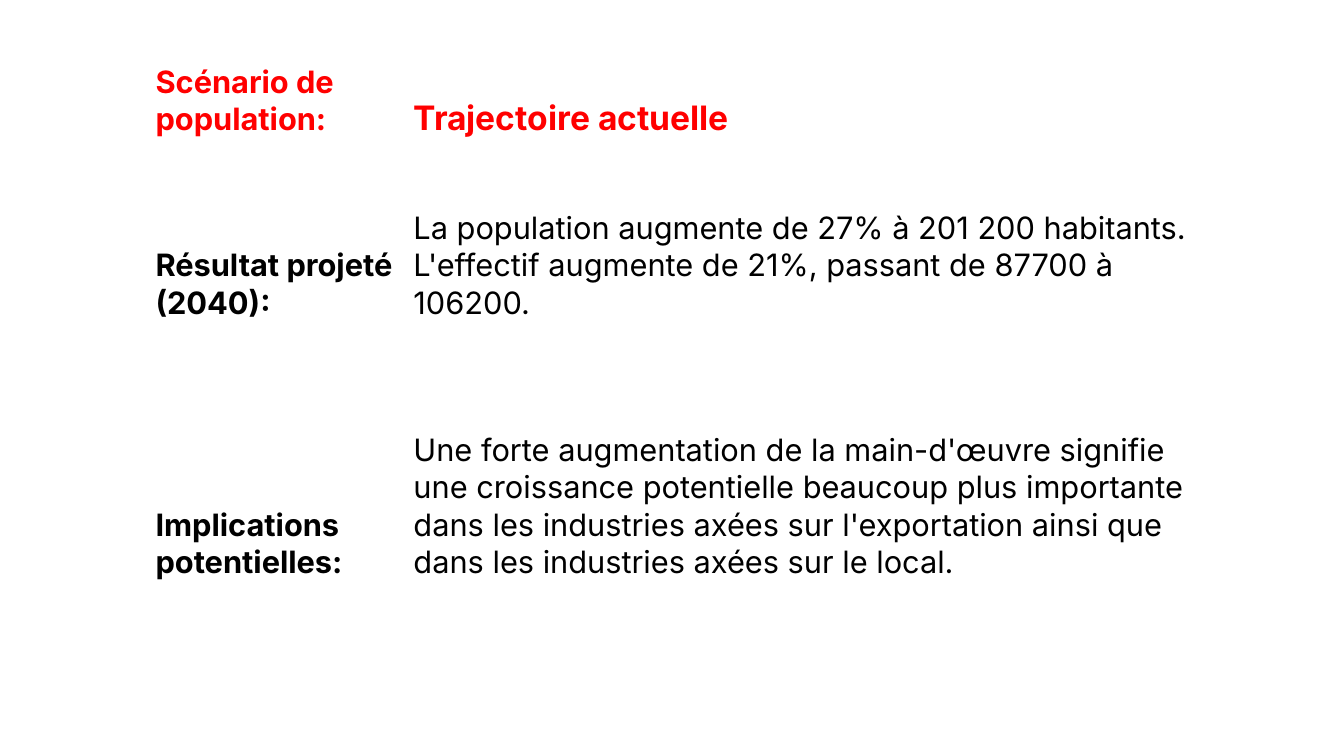
from lxml.etree import SubElement
from pptx import Presentation
from pptx.dml.color import RGBColor
from pptx.enum.text import MSO_ANCHOR
from pptx.oxml.ns import qn
from pptx.util import Cm, Pt

RED = RGBColor(0xFF, 0x00, 0x00)
BLACK = RGBColor(0x00, 0x00, 0x00)
WHITE = RGBColor(0xFF, 0xFF, 0xFF)
FONT = "Inter"
LABEL_SIZE = 22
HEADING_SIZE = 24

COLUMN_WIDTHS = (6.5, 20.45)
ROW_HEIGHTS = (2.57, 4.62, 6.53, 2.46, 1.9)

# Label, paragraphs, colour, size and weight of the paragraphs
SCENARIO = (
    ("Scénario de population:", ("Trajectoire actuelle",), RED, HEADING_SIZE, True),
    ("Résultat projeté (2040):",
     ("La population augmente de 27% à 201 200 habitants.",
      "L'effectif augmente de 21%, passant de 87700 à 106200."),
     BLACK, LABEL_SIZE, False),
    ("Implications potentielles:",
     ("Une forte augmentation de la main-d'œuvre signifie une croissance "
      "potentielle beaucoup plus importante dans les industries axées sur "
      "l'exportation ainsi que dans les industries axées sur le local.",),
     BLACK, LABEL_SIZE, False),
)


def add_borders(cell):
    properties = cell._tc.get_or_add_tcPr()
    for side in ("a:lnL", "a:lnR", "a:lnT", "a:lnB"):
        border = SubElement(properties, qn(side), w=str(Pt(1)))
        solid = SubElement(border, qn("a:solidFill"))
        SubElement(solid, qn("a:srgbClr"), val=str(WHITE))


def format_cell(cell):
    cell.vertical_anchor = MSO_ANCHOR.BOTTOM
    cell.margin_left = cell.margin_right = cell.margin_top = Cm(0.03)
    cell.margin_bottom = 0
    add_borders(cell)
    cell.fill.background()


def write_cell(cell, texts, color, size, bold):
    frame = cell.text_frame
    for index, text in enumerate(texts):
        paragraph = frame.add_paragraph() if index else frame.paragraphs[0]
        run = paragraph.add_run()
        run.text = text
        run.font.name = FONT
        run.font.size = Pt(size)
        run.font.bold = bold
        run.font.color.rgb = color


def add_scenario_table(slide, left, top, width, height):
    table = slide.shapes.add_table(
        len(ROW_HEIGHTS), len(COLUMN_WIDTHS),
        Cm(left), Cm(top), Cm(width), Cm(height)).table
    table.first_row = False
    table.horz_banding = False
    for column, column_width in zip(table.columns, COLUMN_WIDTHS):
        column.width = Cm(column_width)
    for row, row_height in zip(table.rows, ROW_HEIGHTS):
        row.height = Cm(row_height)
    for cell in table.iter_cells():
        format_cell(cell)
    for row, (label, texts, color, size, bold) in enumerate(SCENARIO):
        write_cell(table.cell(row, 0), (label,), color, LABEL_SIZE, True)
        write_cell(table.cell(row, 1), texts, color, size, bold)


def main():
    presentation = Presentation()
    presentation.slide_width = Cm(33.87)
    presentation.slide_height = Cm(19.05)
    slide = presentation.slides.add_slide(presentation.slide_layouts[6])
    add_scenario_table(slide, 3.89, 0.91, sum(COLUMN_WIDTHS), sum(ROW_HEIGHTS))
    presentation.save("out.pptx")


if __name__ == "__main__":
    main()
